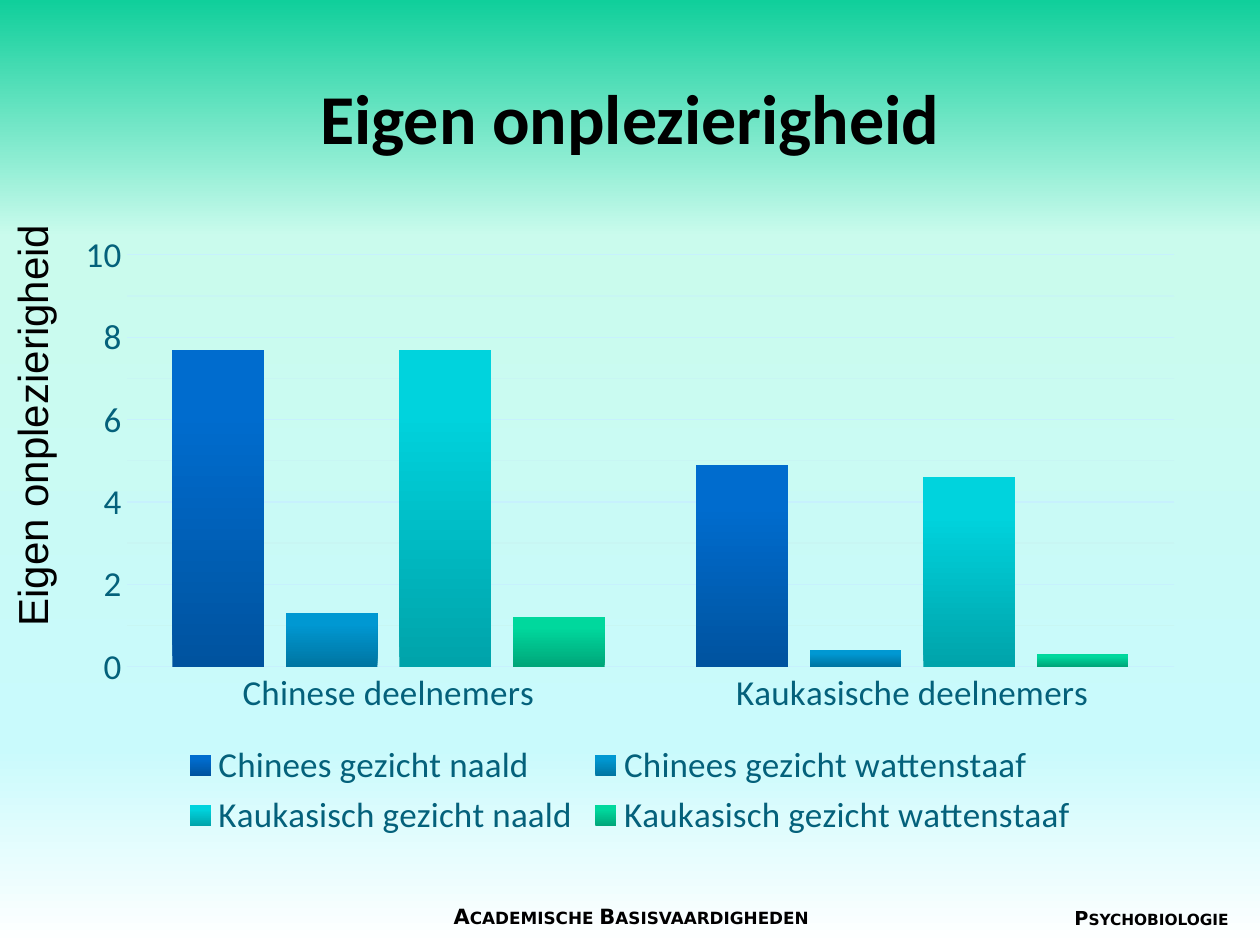
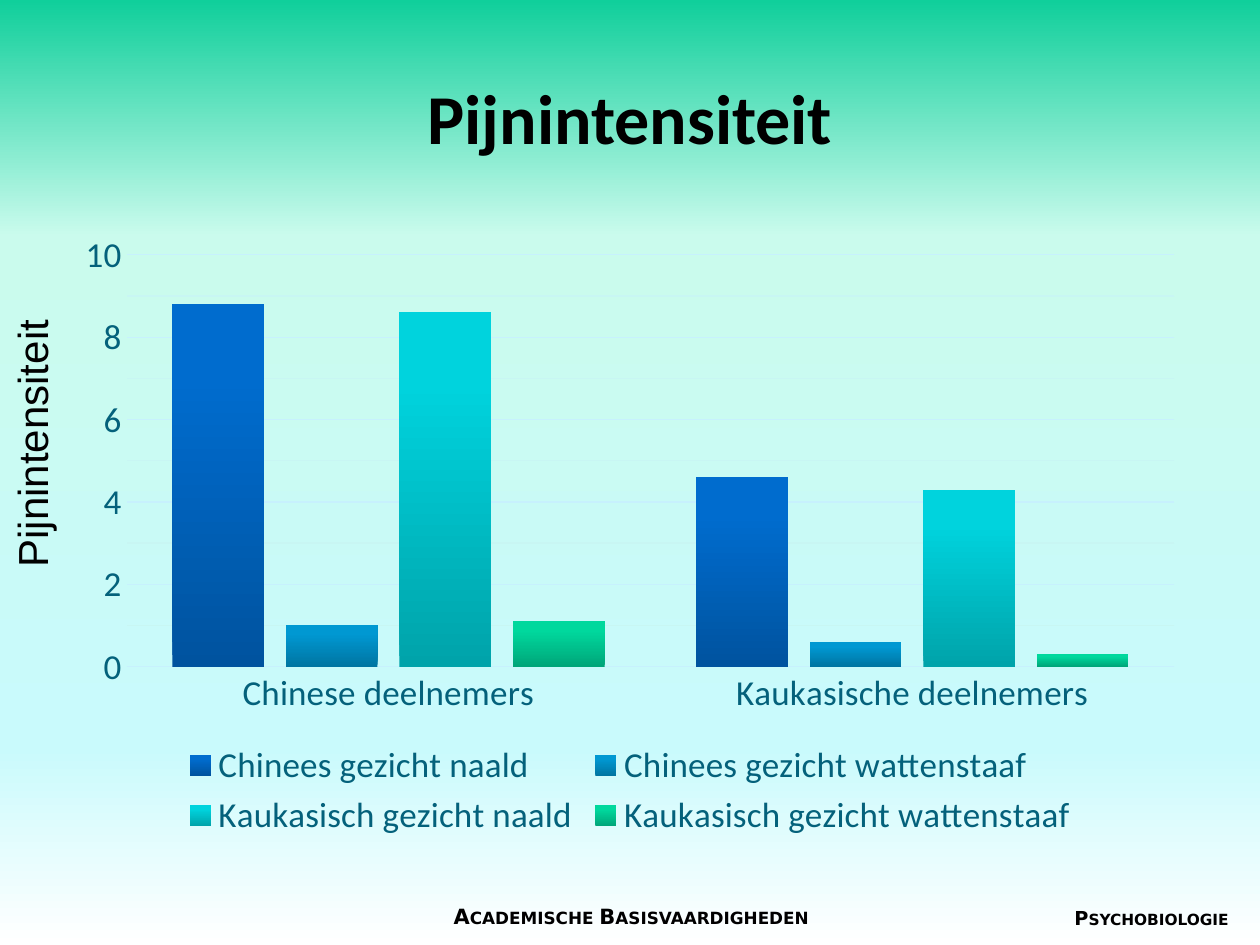
"""Build two slides that compare pain ratings of Chinese and Caucasian participants."""
from dataclasses import dataclass

from lxml.etree import SubElement
from pptx import Presentation
from pptx.chart.chart import Chart
from pptx.chart.data import CategoryChartData
from pptx.dml.color import RGBColor
from pptx.dml.fill import FillFormat
from pptx.enum.chart import XL_CHART_TYPE, XL_LEGEND_POSITION, XL_TICK_MARK
from pptx.enum.text import MSO_ANCHOR, PP_ALIGN
from pptx.oxml.ns import qn
from pptx.slide import Slide
from pptx.util import Cm, Pt

COLOURS = {
    "text": "000000",
    "axis": "04617B",
    "grid": "C7F1FD",
    "minor_grid": "C8F6F3",
}
Stops = list[tuple[int, str]]
BACKGROUND: Stops = [(0, "FFFFFF"), (21, "C9FAFC"), (75, "CAFBED"), (100, "10CF9B")]
SERIES_STOPS: dict[str, Stops] = {
    name: list(zip((0, 80, 100), shades))
    for name, shades in {
        "Chinees gezicht naald": ("00539F", "006CCE", "006DCF"),
        "Chinees gezicht wattenstaaf": ("0075A2", "0098D2", "0099D3"),
        "Kaukasisch gezicht naald": ("00A3AA", "00D3DD", "00D4DE"),
        "Kaukasisch gezicht wattenstaaf": ("00A679", "00D89D", "00D99E"),
    }.items()
}
PARTICIPANTS = ("Chinese deelnemers", "Kaukasische deelnemers")


@dataclass(frozen=True)
class Label:
    """Place and style of one text box, lengths in centimetres."""
    left: float
    top: float
    width: float
    height: float
    size: int
    font: str
    align: PP_ALIGN = PP_ALIGN.LEFT
    bold: bool = True
    small_caps: bool = False
    vertical: bool = False


@dataclass(frozen=True)
class Rating:
    """One measured rating with the place of its axis label."""
    name: str
    label_top: float
    label_height: float
    values: tuple[tuple[float, float], ...]


TITLE = Label(1.27, 0.76, 22.86, 3.18, 40, "Calibri", PP_ALIGN.CENTER)
FOOTERS = {
    "Academische Basisvaardigheden":
        Label(8.56, 18.08, 8.33, 0.76, 12, "DejaVu Sans", PP_ALIGN.CENTER, small_caps=True),
    "Psychobiologie":
        Label(18.8, 18.14, 6.22, 0.74, 11, "DejaVu Sans", PP_ALIGN.RIGHT, small_caps=True),
}
RATINGS = (
    Rating("Eigen onplezierigheid", 4.42, 8.46,
           ((7.7, 4.9), (1.3, 0.4), (7.7, 4.6), (1.2, 0.3))),
    Rating("Pijnintensiteit", 6.38, 5.31,
           ((8.8, 4.6), (1, 0.6), (8.6, 4.3), (1.1, 0.3))),
)


def colour(key: str) -> RGBColor:
    """Return the named colour."""
    return RGBColor.from_string(COLOURS[key])


def fill_gradient(fill: FillFormat, owner, stops: Stops) -> None:
    """Fill the owner element with stops that run from bottom to top."""
    fill.gradient()
    fill.gradient_angle = 90
    stop_list = next(owner.iter(qn("a:gsLst")))
    for old_stop in list(stop_list):
        stop_list.remove(old_stop)
    for percent, shade in stops:
        stop = SubElement(stop_list, qn("a:gs"), pos=str(percent * 1000))
        SubElement(stop, qn("a:srgbClr"), val=shade)


def add_label(slide: Slide, text: str, label: Label) -> None:
    """Add one line of text in the given style."""
    box = slide.shapes.add_textbox(
        Cm(label.left), Cm(label.top), Cm(label.width), Cm(label.height))
    frame = box.text_frame
    frame.word_wrap = not label.vertical
    if label.vertical:
        frame._txBody.bodyPr.set("vert", "vert270")
    elif label is TITLE:
        frame.vertical_anchor = MSO_ANCHOR.MIDDLE
    line = frame.paragraphs[0]
    line.text = text
    line.alignment = label.align
    font = line.font
    font.name, font.size, font.bold = label.font, Pt(label.size), label.bold
    font.color.rgb = colour("text")
    if label.small_caps:
        next(line._p.iter(qn("a:defRPr"))).set("cap", "small")


def style_axes(chart: Chart) -> None:
    """Set scale, gridlines and text of both axes."""
    scale, groups = chart.value_axis, chart.category_axis
    for axis in (scale, groups):
        axis.major_tick_mark = axis.minor_tick_mark = XL_TICK_MARK.NONE
        axis.tick_labels.font.size = Pt(20)
        axis.tick_labels.font.name = "Calibri"
        axis.tick_labels.font.color.rgb = colour("axis")
    scale.minimum_scale, scale.maximum_scale = 0, 10
    scale.major_unit, scale.minor_unit = 2, 1
    scale.has_major_gridlines = scale.has_minor_gridlines = True
    scale.format.line.fill.background()
    for line in (groups.format.line, scale.major_gridlines.format.line):
        line.color.rgb = colour("grid")
        line.width = Pt(0.75)
    minor_grid = next(chart.element.iter(qn("c:minorGridlines")))
    minor_line = SubElement(
        SubElement(minor_grid, qn("c:spPr")), qn("a:ln"), w=str(Pt(0.75)))
    minor_fill = SubElement(minor_line, qn("a:solidFill"))
    SubElement(minor_fill, qn("a:srgbClr"), val=COLOURS["minor_grid"])


def add_rating_chart(slide: Slide, rating: Rating) -> None:
    """Add the clustered columns of one rating."""
    ratings = CategoryChartData()
    ratings.categories = PARTICIPANTS
    for name, values in zip(SERIES_STOPS, rating.values):
        ratings.add_series(name, values)
    chart = slide.shapes.add_chart(
        XL_CHART_TYPE.COLUMN_CLUSTERED,
        Cm(1.27), Cm(4.45), Cm(22.86), Cm(12.57), ratings).chart
    chart.has_title = False
    chart.font.name, chart.font.size = "Calibri", Pt(20)
    chart.font.color.rgb = colour("text")
    chart.has_legend = True
    legend = chart.legend
    legend.position = XL_LEGEND_POSITION.BOTTOM
    legend.include_in_layout = False
    legend.font.name, legend.font.size = "Calibri", Pt(20)
    legend.font.color.rgb = colour("axis")
    columns = chart.plots[0]
    columns.gap_width, columns.overlap = 100, -24
    columns.vary_by_categories = False
    for series in columns.series:
        fill_gradient(series.format.fill, series._element, SERIES_STOPS[series.name])
    style_axes(chart)


def add_rating_slide(presentation, rating: Rating) -> None:
    """Add the slide of one rating."""
    slide = presentation.slides.add_slide(presentation.slide_layouts[6])
    fill_gradient(slide.background.fill, slide.element, BACKGROUND)
    for text, footer in FOOTERS.items():
        add_label(slide, text, footer)
    add_label(slide, rating.name, TITLE)
    add_label(slide, rating.name, Label(
        0, rating.label_top, 1.55, rating.label_height, 24, "Arial",
        bold=False, vertical=True))
    add_rating_chart(slide, rating)


def main() -> None:
    """Build and save the presentation."""
    presentation = Presentation()
    presentation.slide_width, presentation.slide_height = Cm(25.4), Cm(19.05)
    for rating in RATINGS:
        add_rating_slide(presentation, rating)
    presentation.save("out.pptx")


if __name__ == "__main__":
    main()
